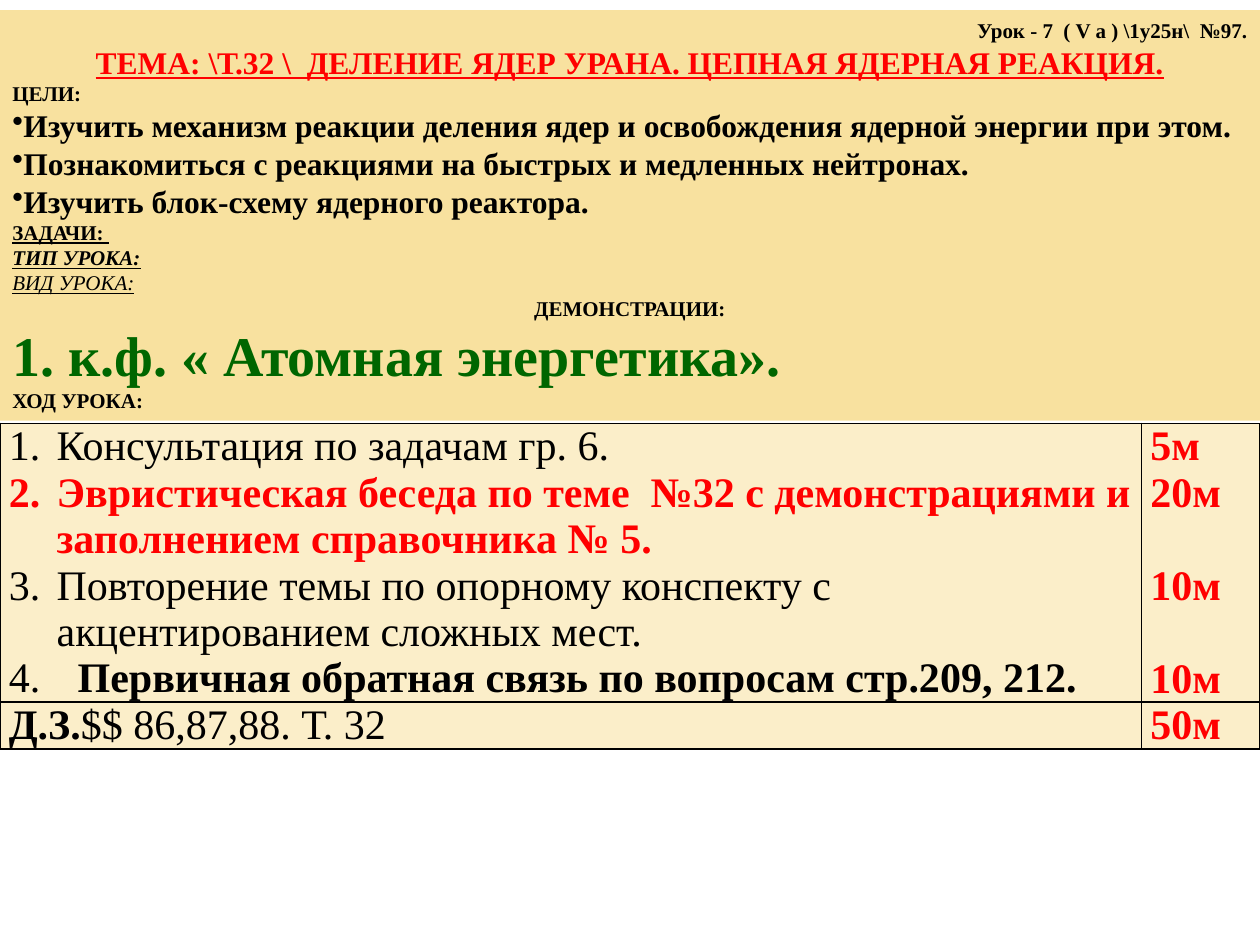
import pptx
import pptx.util
import pptx.dml.color
import pptx.enum.shapes
import pptx.enum.text
import pptx.oxml
import pptx.oxml.ns
import lxml.etree

Inches = pptx.util.Inches
Pt = pptx.util.Pt
ALIGN = pptx.enum.text.PP_ALIGN
FONT = "Times New Roman"
COLORS = {
    "black": "000000",
    "red": "FF0000",
    "green": "006600",
    "sand": "F8E19F",
    "cream": "FBEEC9",
}
LINE = 26.6


def color(name):
    return pptx.dml.color.RGBColor.from_string(COLORS[name])


def sub(node, tag, **attrs):
    return lxml.etree.SubElement(node, pptx.oxml.ns.qn(tag), attrs)


def style(run, size, hue="black", bold=True, italic=False, under=False):
    font = run.font
    font.name = FONT
    font.size = Pt(size)
    font.color.rgb = color(hue)
    font.bold = bold
    font.italic = italic
    font.underline = under


def add_line(frame, first, text, size, **look):
    para = frame.paragraphs[0] if first else frame.add_paragraph()
    para.text = text
    style(para.runs[0], size, **look)
    return para


def indent(para, left):
    props = para._p.get_or_add_pPr()
    props.set("marL", str(Inches(left)))
    props.set("indent", str(-Inches(left)))
    return props


def add_head(slide):
    kind = pptx.enum.shapes.MSO_SHAPE.RECTANGLE
    box = slide.shapes.add_shape(kind, 0, Inches(0.08), Inches(10), Inches(3.26))
    box.shadow.inherit = False
    box.fill.solid()
    box.fill.fore_color.rgb = color("sand")
    box.line.fill.background()
    frame = box.text_frame
    frame.word_wrap = True
    frame.vertical_anchor = pptx.enum.text.MSO_ANCHOR.MIDDLE
    lines = [
        ("Урок - 7  ( V а ) \\1у25н\\  №97.", 12, ALIGN.RIGHT, {}),
        ("ТЕМА: \\Т.32 \\  ДЕЛЕНИЕ ЯДЕР УРАНА. ЦЕПНАЯ ЯДЕРНАЯ РЕАКЦИЯ.",
         18, ALIGN.CENTER, {"hue": "red", "under": True}),
        ("ЦЕЛИ:", 12, ALIGN.LEFT, {}),
        ("Изучить механизм реакции деления ядер и освобождения ядерной "
         "энергии при этом.", 18, ALIGN.LEFT, {}),
        ("Познакомиться с реакциями на быстрых и медленных нейтронах.",
         18, ALIGN.LEFT, {}),
        ("Изучить блок-схему ядерного реактора.", 18, ALIGN.LEFT, {}),
        ("ЗАДАЧИ: ", 12, ALIGN.LEFT, {"under": True}),
        ("ТИП УРОКА:", 12, ALIGN.LEFT, {"under": True, "italic": True}),
        ("ВИД УРОКА:", 12, ALIGN.LEFT,
         {"under": True, "italic": True, "bold": False}),
        ("ДЕМОНСТРАЦИИ:", 12, ALIGN.CENTER, {}),
        ("1. к.ф. « Атомная энергетика».", 32, ALIGN.LEFT, {"hue": "green"}),
        ("ХОД УРОКА:", 12, ALIGN.LEFT, {}),
    ]
    for num, (text, size, align, look) in enumerate(lines):
        para = add_line(frame, num == 0, text, size, **look)
        para.alignment = align
        if size == 18 and align == ALIGN.LEFT:
            sub(indent(para, 0), "a:buChar", char="•")


def set_cell(cell):
    cell.margin_left = cell.margin_right = Inches(0.07)
    cell.margin_top = cell.margin_bottom = 0
    props = cell._tc.get_or_add_tcPr()
    for side in ("a:lnL", "a:lnR", "a:lnT", "a:lnB"):
        edge = sub(props, side, w=str(Pt(1)))
        sub(sub(edge, "a:solidFill"), "a:srgbClr", val=COLORS["black"])
    cell.fill.solid()
    cell.fill.fore_color.rgb = color("cream")


def add_plan(slide):
    frame = slide.shapes.add_table(2, 2, 0, Inches(3.36), Inches(10), Inches(2.58))
    table = frame.table
    for col, width in zip(table.columns, (9.06, 0.94)):
        col.width = Inches(width)
    for row, height in zip(table.rows, (2.21, 0.37)):
        row.height = Inches(height)
    for cell in table.iter_cells():
        set_cell(cell)

    steps = [
        ("Консультация по задачам гр. 6.", "5м", 0, {"bold": False}),
        ("Эвристическая беседа по теме  №32 с демонстрациями и заполнением "
         "справочника № 5.", "20м", 0, {"hue": "red"}),
        ("Повторение темы по опорному конспекту с акцентированием сложных мест.",
         "10м", LINE, {"bold": False}),
        ("  ", "10м", LINE, {"bold": False}),
    ]
    work = table.cell(0, 0).text_frame
    times = table.cell(0, 1).text_frame
    for num, (text, time, gap, look) in enumerate(steps):
        para = add_line(work, num == 0, text, 24, **look)
        sub(indent(para, 0.38), "a:buAutoNum", type="arabicPeriod")
        mark = add_line(times, num == 0, time, 24, hue="red")
        mark.space_before = Pt(gap)
    last = para.add_run()
    last.text = "Первичная обратная связь по вопросам стр.209, 212."
    style(last, 24)

    home = add_line(table.cell(1, 0).text_frame, True, "Д.З.", 24)
    task = home.add_run()
    task.text = "$$ 86,87,88. Т. 32"
    style(task, 24, bold=False)
    add_line(table.cell(1, 1).text_frame, True, "50м", 24, hue="red")


def main():
    deck = pptx.Presentation()
    deck.slide_width = Inches(10)
    deck.slide_height = Inches(7.5)
    slide = deck.slides.add_slide(deck.slide_layouts[6])
    add_plan(slide)
    add_head(slide)
    deck.save("out.pptx")


if __name__ == "__main__":
    main()
